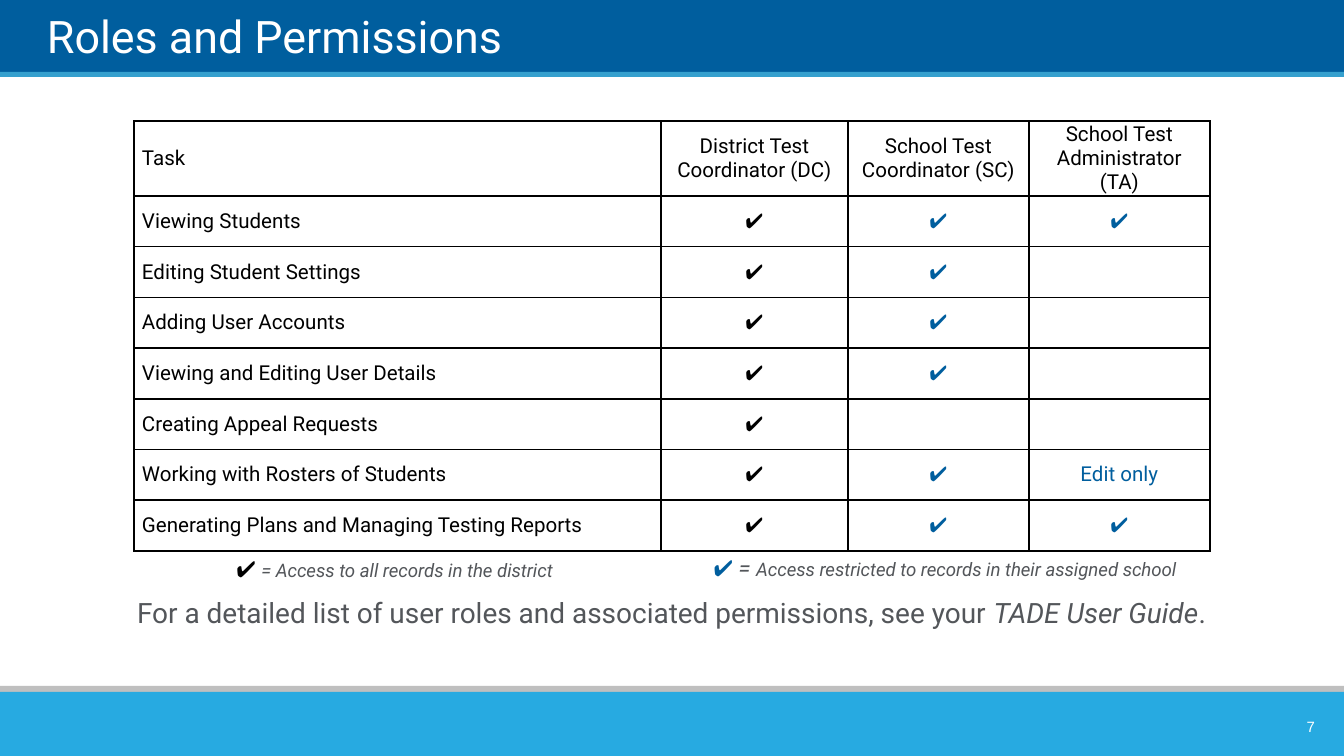
import pptx
import pptx.dml.color
import pptx.enum.shapes
import pptx.enum.text
import pptx.oxml
import pptx.oxml.ns
import pptx.util

RGB = pptx.dml.color.RGBColor
ALIGN = pptx.enum.text.PP_ALIGN
ANCHOR = pptx.enum.text.MSO_ANCHOR
NAVY = RGB(0x00, 0x5E, 0x9E)
BLUE = RGB(0x35, 0xA0, 0xCE)
SKY = RGB(0x27, 0xAA, 0xE1)
SILVER = RGB(0xBF, 0xBF, 0xBF)
GRAY = RGB(0x53, 0x56, 0x5A)
BLACK = RGB(0x00, 0x00, 0x00)
WHITE = RGB(0xFF, 0xFF, 0xFF)


def px(length):
    return round(length * 914400 / 134.4)


def add_run(paragraph, text, size, color, italic=False, font="Roboto"):
    run = paragraph.add_run()
    run.text = text
    run.font.name = font
    run.font.size = pptx.util.Pt(size)
    run.font.color.rgb = color
    run.font.italic = italic


deck = pptx.Presentation()
deck.slide_width, deck.slide_height = px(1344), px(756)
slide = deck.slides.add_slide(deck.slide_layouts[5])

# Header and footer bands
for top, height, color in [(0, 74, NAVY), (72, 5, BLUE), (686, 14, SILVER), (692, 64, SKY)]:
    band = slide.shapes.add_shape(
        pptx.enum.shapes.MSO_SHAPE.RECTANGLE, 0, px(top), px(1344), px(height))
    band.shadow.inherit = False
    band.fill.solid()
    band.fill.fore_color.rgb = color
    band.line.fill.background()

# Title, brought in front of the header band
title = slide.shapes.title
slide.shapes._spTree.append(title._element)
title.left, title.top, title.width, title.height = px(47), px(7), px(1215), px(56)
heading = title.text_frame
heading.margin_left = heading.margin_right = heading.margin_top = heading.margin_bottom = 0
heading.vertical_anchor = ANCHOR.BOTTOM
heading.paragraphs[0].alignment = ALIGN.LEFT
add_run(heading.paragraphs[0], "Roles and Permissions", 24, WHITE)

# Permissions table: task, then access of DC, SC and TA
permissions = [
    ("Task", "District Test Coordinator (DC)", "School Test Coordinator (SC)",
     "School Test Administrator (TA)"),
    ("Viewing Students", "✔", "✔", "✔"),
    ("Editing Student Settings", "✔", "✔", ""),
    ("Adding User Accounts", "✔", "✔", ""),
    ("Viewing and Editing User Details", "✔", "✔", ""),
    ("Creating Appeal Requests", "✔", "", ""),
    ("Working with Rosters of Students", "✔", "✔", "Edit only"),
    ("Generating Plans and Managing Testing Reports", "✔", "✔", "✔"),
]
column_widths = [527, 187, 181, 181]
header_height, tasks_height = 75, 355
task_count = len(permissions) - 1
grid = slide.shapes.add_table(
    len(permissions), len(column_widths), px(134), px(121),
    px(sum(column_widths)), px(header_height + tasks_height)).table
grid.first_row = grid.horz_banding = False
for column, width in zip(grid.columns, column_widths):
    column.width = px(width)

for r, entries in enumerate(permissions):
    grid.rows[r].height = px(header_height if r == 0 else tasks_height / task_count)
    for c, entry in enumerate(entries):
        cell = grid.cell(r, c)
        cell.fill.background()
        cell.vertical_anchor = ANCHOR.MIDDLE
        cell.margin_left = cell.margin_right = px(8)
        cell.margin_top = cell.margin_bottom = 0
        paragraph = cell.text_frame.paragraphs[0]
        paragraph.alignment = ALIGN.CENTER if c else ALIGN.LEFT
        paragraph.font.size = pptx.util.Pt(11)
        if entry:
            add_run(paragraph, entry, 11, NAVY if r and c > 1 else BLACK)
        for i, side in enumerate(("lnL", "lnR", "lnT", "lnB")):
            border = pptx.oxml.parse_xml(
                f'<a:{side} {pptx.oxml.ns.nsdecls("a")} w="12700"><a:solidFill>'
                f'<a:srgbClr val="{BLACK}"/></a:solidFill></a:{side}>')
            cell._tc.get_or_add_tcPr().insert(i, border)

# Legend, reference line and page number
notes = [
    ((139, 550, 511, 42), ALIGN.CENTER, ANCHOR.TOP, [
        ("✔ ", 12, BLACK),
        ("= Access to all records in the district", 10, GRAY, True)]),
    ((664, 549, 562, 42), ALIGN.CENTER, ANCHOR.TOP, [
        ("✔ ", 12, NAVY),
        ("= ", 12, GRAY, True),
        ("Access restricted to records in their assigned school", 10, GRAY, True)]),
    ((109, 591, 1125, 44), ALIGN.CENTER, ANCHOR.TOP, [
        ("For a detailed list of user roles and associated permissions, see your ", 15, GRAY),
        ("TADE User Guide", 15, GRAY, True),
        (".", 15, GRAY)]),
    ((1247, 711, 78, 31), ALIGN.RIGHT, ANCHOR.MIDDLE, [
        ("7", 8, WHITE, False, "Arial")]),
]
for box, alignment, anchor, runs in notes:
    frame = slide.shapes.add_textbox(*map(px, box)).text_frame
    frame.word_wrap = True
    frame.vertical_anchor = anchor
    frame.margin_left = frame.margin_right = px(10)
    frame.margin_top = frame.margin_bottom = px(5)
    frame.paragraphs[0].alignment = alignment
    for run in runs:
        add_run(frame.paragraphs[0], *run)

deck.save("out.pptx")
